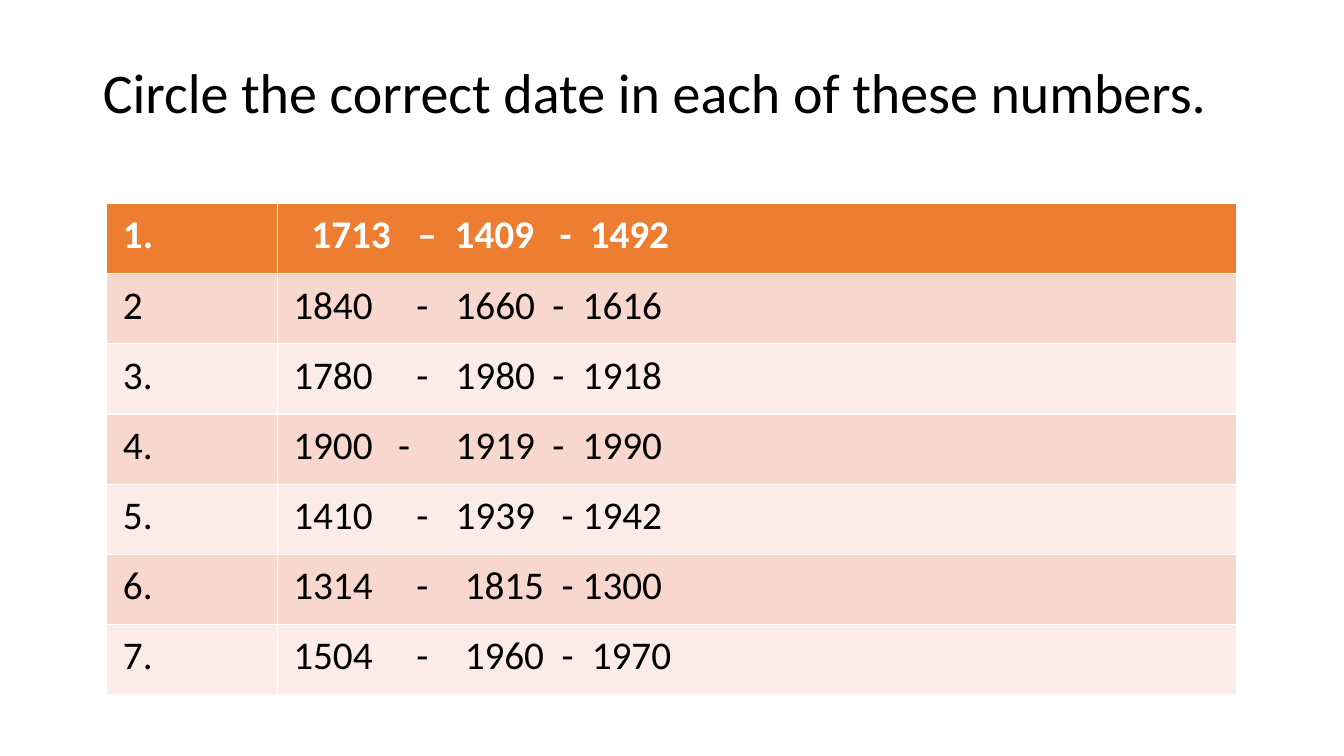
from pptx import Presentation
from pptx.dml.color import RGBColor
from pptx.enum.text import MSO_ANCHOR, PP_ALIGN
from pptx.oxml.ns import qn
from pptx.util import Inches, Pt
from lxml import etree

BLACK = RGBColor(0x00, 0x00, 0x00)
WHITE = RGBColor(0xFF, 0xFF, 0xFF)
ORANGE = RGBColor(0xED, 0x7D, 0x31)
PEACH = RGBColor(0xF8, 0xD7, 0xCE)
PALE_PEACH = RGBColor(0xFC, 0xEC, 0xE8)

# Number, dates with their separators, tab stops in inches
QUESTIONS = [
    ("1.", "1713 – 1409 - 1492", (1.05, 1.42, 2.46, 2.76)),
    ("2", "1840 - 1660 - 1616", (1.22, 1.61, 2.57, 2.87)),
    ("3.", "1780 - 1980 - 1918", (1.22, 1.61, 2.57, 2.87)),
    ("4.", "1900 - 1919 - 1990", (1.04, 1.61, 2.57, 2.87)),
    ("5.", "1410 - 1939 - 1942", (1.22, 1.61, 2.66, 2.87)),
    ("6.", "1314 - 1815 - 1300", (1.22, 1.7, 2.66, 2.87)),
    ("7.", "1504 - 1960 - 1970", (1.22, 1.7, 2.66, 2.96)),
]


def style_font(font, size, color, bold=False):
    font.name = "Calibri"
    font.size = Pt(size)
    font.bold = bold
    font.color.rgb = color


def set_tab_stops(paragraph, stops):
    properties = paragraph._p.get_or_add_pPr()
    tab_list = etree.Element(qn("a:tabLst"))
    for stop in stops:
        etree.SubElement(tab_list, qn("a:tab"), pos=str(Inches(stop)), algn="l")
    # The schema places tab stops before the default run properties
    properties.insert(0, tab_list)


presentation = Presentation()
presentation.slide_width = Inches(13.33)
presentation.slide_height = Inches(7.5)
slide = presentation.slides.add_slide(presentation.slide_layouts[5])

title = slide.shapes.title
title.left, title.top = Inches(0.92), Inches(0.2)
title.width, title.height = Inches(11.5), Inches(1.49)
title.text_frame.text = "Circle the correct date in each of these numbers."
title.text_frame.vertical_anchor = MSO_ANCHOR.MIDDLE
heading = title.text_frame.paragraphs[0]
heading.alignment = PP_ALIGN.LEFT
heading.line_spacing = 0.9
style_font(heading.font, 40, BLACK)

table = slide.shapes.add_table(
    len(QUESTIONS), 2, Inches(1.06), Inches(2.02), Inches(11.21), Inches(4.87)
).table
table.columns[0].width = Inches(1.69)
table.columns[1].width = Inches(9.52)

for row, (number, dates, stops) in enumerate(QUESTIONS):
    is_header = row == 0
    fill_color = ORANGE if is_header else (PALE_PEACH, PEACH)[row % 2]
    for column, text in enumerate((number, dates.replace(" ", "\t"))):
        cell = table.cell(row, column)
        cell.text = text
        cell.fill.solid()
        cell.fill.fore_color.rgb = fill_color
        cell.margin_left = cell.margin_right = Inches(0.16)
        cell.margin_top = cell.margin_bottom = Inches(0.08)
        paragraph = cell.text_frame.paragraphs[0]
        style_font(paragraph.font, 28, WHITE if is_header else BLACK, is_header)
    set_tab_stops(paragraph, stops)

# The dates of the first row start a little further in
table.cell(0, 1).margin_left = Inches(0.34)

presentation.save("out.pptx")
